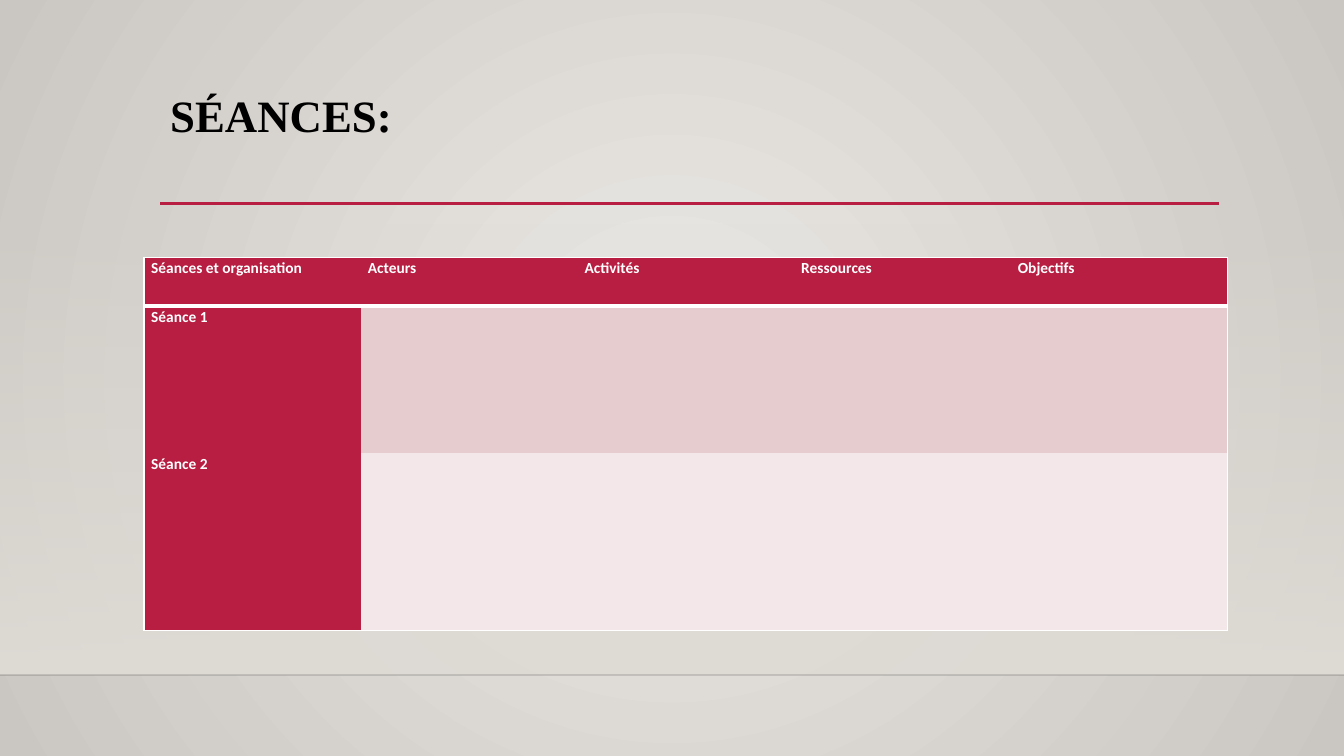
from dataclasses import dataclass

from lxml.etree import SubElement
from pptx import Presentation
from pptx.dml.color import RGBColor
from pptx.dml.fill import FillFormat
from pptx.enum.shapes import MSO_CONNECTOR as Link, MSO_SHAPE as Form
from pptx.enum.text import MSO_ANCHOR as Anchor
from pptx.oxml import parse_xml
from pptx.oxml.ns import nsdecls, qn
from pptx.slide import Slide
from pptx.table import _Cell as Cell
from pptx.text.text import _Paragraph as Para
from pptx.util import Cm, Pt

RED = RGBColor(0xB7, 0x1E, 0x42)
WHITE = RGBColor(0xFF, 0xFF, 0xFF)
BLACK = RGBColor(0x00, 0x00, 0x00)
INK = RGBColor(0x00, 0x00, 0x01)
PALE = RGBColor(0xEC, 0xEA, 0xE7)
GREY = RGBColor(0xCA, 0xC6, 0xC1)
SAND = RGBColor(0xDF, 0xDB, 0xD5)
ROSE = RGBColor(0xE6, 0xCC, 0xCF)
BLUSH = RGBColor(0xF3, 0xE7, 0xE9)

WIDE, HIGH = 33.87, 19.05
FLOOR = 17.01
COL = 5.46


@dataclass
class Rule:
    left: float
    right: float
    top: float
    color: RGBColor
    width: float
    alpha: int = 100


@dataclass
class Row:
    height: float
    texts: list[str]
    fill: RGBColor


RULES = [
    Rule(0, WIDE, FLOOR, INK, 1, 20),
    Rule(4.04, 30.73, 5.13, RED, 2.5),
]
ROWS = [
    Row(1.23, ["Séances et organisation", "Acteurs", "Activités",
               "Ressources", "Objectifs"], RED),
    Row(3.71, ["Séance 1", "", "", "", ""], ROSE),
    Row(4.47, ["Séance 2", "", "", "", ""], BLUSH),
]


def set_alpha(color, percent: int) -> None:
    SubElement(color, qn("a:alpha")).set("val", str(percent * 1000))


def blend(fill: FillFormat, first: RGBColor, last: RGBColor) -> None:
    """Fill with a two-stop gradient running from top to bottom."""
    fill.gradient()
    fill.gradient_angle = 270
    for stop, color, place in zip(fill.gradient_stops, (first, last), (0, 1)):
        stop.color.rgb = color
        stop.position = place


def add_back(slide: Slide) -> None:
    blend(slide.background.fill, PALE, GREY)
    lin = slide.element.xpath(".//p:bg//a:lin")[0]
    lin.getparent().replace(lin, parse_xml(
        f'<a:path {nsdecls("a")} path="circle">'
        '<a:fillToRect l="50000" t="50000" r="50000" b="50000"/></a:path>'))


def add_band(slide: Slide) -> None:
    top = 5.61
    band = slide.shapes.add_shape(
        Form.RECTANGLE, 0, Cm(top), Cm(WIDE), Cm(FLOOR - top))
    band.shadow.inherit = False
    band.line.fill.background()
    blend(band.fill, SAND, SAND)
    set_alpha(band.element.xpath(".//a:gs/a:srgbClr")[0], 0)


def add_rule(slide: Slide, rule: Rule) -> None:
    line = slide.shapes.add_connector(
        Link.STRAIGHT, Cm(rule.left), Cm(rule.top),
        Cm(rule.right), Cm(rule.top))
    line.line.color.rgb = rule.color
    line.line.width = Pt(rule.width)
    if rule.alpha < 100:
        set_alpha(line.element.xpath(".//a:ln//a:srgbClr")[0], rule.alpha)
    SubElement(line.element.spPr, qn("a:effectLst"))


def add_run(para: Para, text: str, face: str, size: int,
            color: RGBColor) -> None:
    run = para.add_run()
    run.text = text
    run.font.name = face
    run.font.size = Pt(size)
    run.font.bold = True
    run.font.color.rgb = color


def add_title(slide: Slide) -> None:
    box = slide.shapes.add_textbox(Cm(4.04), Cm(2.24), Cm(26.67), Cm(2.92))
    frame = box.text_frame
    frame.word_wrap = True
    frame.vertical_anchor = Anchor.TOP
    para = frame.paragraphs[0]
    para.line_spacing = 0.9
    add_run(para, "SÉANCES:", "Times New Roman", 32, BLACK)


def set_edges(cell: Cell, edges: dict[str, int]) -> None:
    """Draw white borders on the sides given, with widths in points."""
    props = cell._tc.get_or_add_tcPr()
    for side in "LRTB":
        width = edges.get(side, 0)
        paint = (f'<a:solidFill><a:srgbClr val="{WHITE}"/></a:solidFill>'
                 if width else "<a:noFill/>")
        props.append(parse_xml(
            f'<a:ln{side} {nsdecls("a")} w="{Pt(width)}">{paint}</a:ln{side}>'))


def fill_cell(cell: Cell, text: str, color: RGBColor) -> None:
    cell.fill.solid()
    cell.fill.fore_color.rgb = color
    cell.margin_left = cell.margin_right = Cm(0.18)
    cell.margin_top = cell.margin_bottom = 0
    if text:
        para = cell.text_frame.paragraphs[0]
        para.line_spacing = 1.07
        para.space_after = Pt(8)
        add_run(para, text, "Calibri", 11, WHITE)


def add_grid(slide: Slide) -> None:
    count = len(ROWS[0].texts)
    frame = slide.shapes.add_table(
        len(ROWS), count, Cm(3.63), Cm(6.48), Cm(COL * count),
        Cm(sum(row.height for row in ROWS)))
    table = frame.table
    table.horz_banding = False
    style = frame.element.xpath(".//a:tableStyleId")[0]
    style.text = "{2D5ABB26-0587-4C30-8999-92F81FD0307C}"
    for col in table.columns:
        col.width = Cm(COL)
    for i, row in enumerate(ROWS):
        table.rows[i].height = Cm(row.height)
        for j, text in enumerate(row.texts):
            edges = {}
            if j == 0:
                edges["L"] = 1
            if j == count - 1:
                edges["R"] = 1
            if i == 0:
                edges.update(T=1, B=3)
            if i == 1:
                edges["T"] = 3
            if i == len(ROWS) - 1:
                edges["B"] = 1
            cell = table.cell(i, j)
            set_edges(cell, edges)
            fill_cell(cell, text, RED if j == 0 else row.fill)


def main() -> None:
    deck = Presentation()
    deck.slide_width, deck.slide_height = Cm(WIDE), Cm(HIGH)
    slide = deck.slides.add_slide(deck.slide_layouts[6])
    add_back(slide)
    add_band(slide)
    for rule in RULES:
        add_rule(slide, rule)
    add_title(slide)
    add_grid(slide)
    deck.save("out.pptx")


if __name__ == "__main__":
    main()
